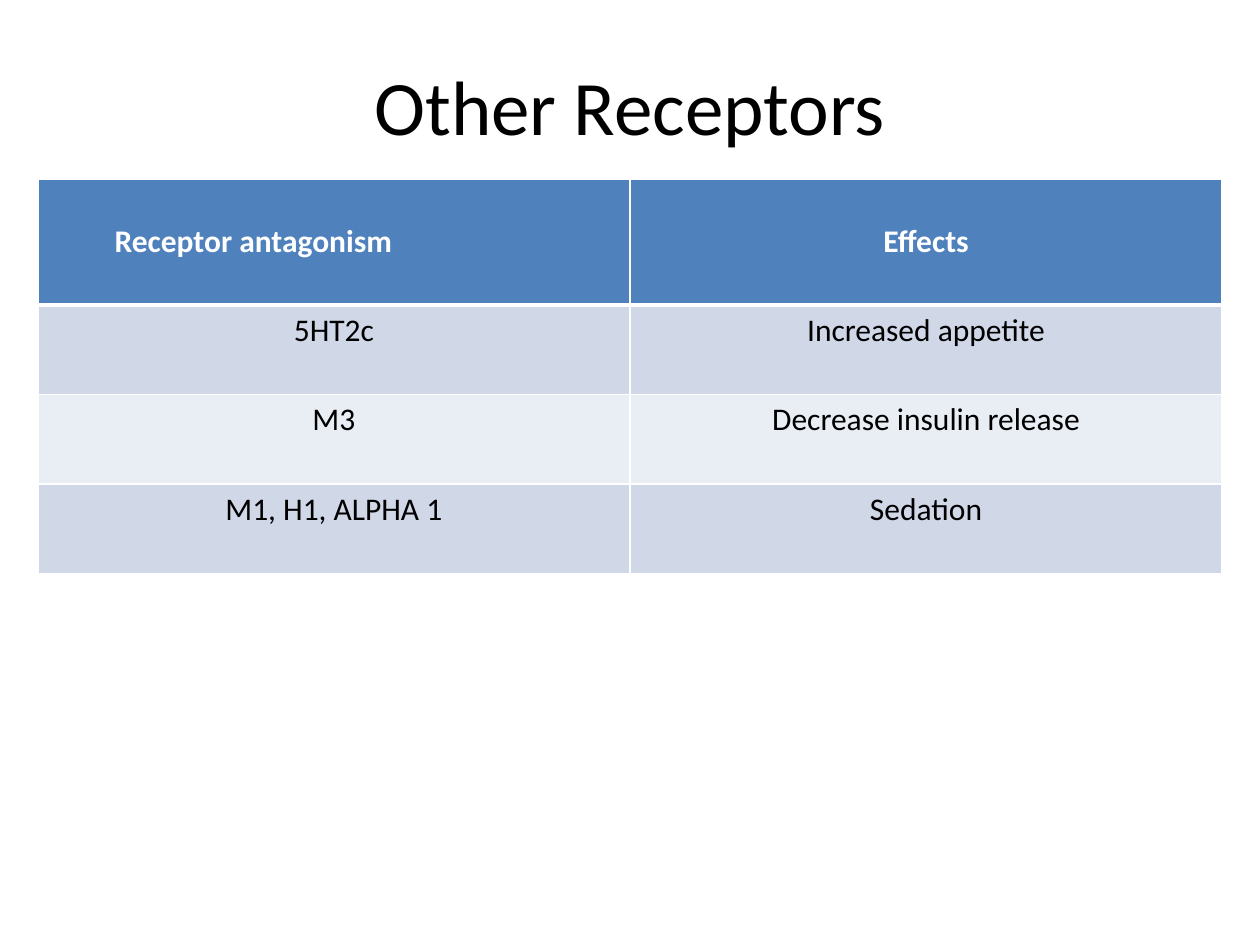
from pptx import Presentation
from pptx.dml.color import RGBColor
from pptx.enum.text import MSO_ANCHOR, PP_ALIGN
from pptx.oxml import parse_xml
from pptx.oxml.ns import nsdecls
from pptx.util import Inches, Pt

WHITE = RGBColor(0xFF, 0xFF, 0xFF)
BLACK = RGBColor(0x00, 0x00, 0x00)
HEADER_BLUE = RGBColor(0x4F, 0x81, 0xBD)
BAND_DARK = RGBColor(0xD0, 0xD8, 0xE8)
BAND_LIGHT = RGBColor(0xE9, 0xED, 0xF4)
FONT = "Calibri"
LEFT, WIDTH = 0.3, 9.4
HEADER_HEIGHT, ROW_HEIGHT = 1, 0.71
RECEPTOR_ROWS = [
    ("Receptor antagonism", "Effects"),
    ("5HT2c", "Increased appetite"),
    ("M3", "Decrease insulin release"),
    ("M1, H1, ALPHA 1", "Sedation"),
]


def set_text(frame, text, size, color, bold=False):
    frame.text = text
    paragraph = frame.paragraphs[0]
    paragraph.alignment = PP_ALIGN.CENTER
    for span in paragraph.runs:
        span.font.name = FONT
        span.font.size = Pt(size)
        span.font.bold = bold
        span.font.color.rgb = color


def set_borders(cell, top, bottom):
    properties = cell._tc.get_or_add_tcPr()
    for side, width in (("L", 1), ("R", 1), ("T", top), ("B", bottom)):
        properties.append(parse_xml(
            f'<a:ln{side} {nsdecls("a")} w="{Pt(width)}"><a:solidFill>'
            f'<a:srgbClr val="{WHITE}"/></a:solidFill></a:ln{side}>'))


def add_title(page, text):
    box = page.shapes.add_textbox(Inches(LEFT), Inches(0.25), Inches(WIDTH), Inches(1.17))
    frame = box.text_frame
    frame.word_wrap = True
    frame.vertical_anchor = MSO_ANCHOR.MIDDLE
    set_text(frame, text, 44, BLACK)


def add_receptor_table(page, rows):
    height = HEADER_HEIGHT + ROW_HEIGHT * (len(rows) - 1)
    table = page.shapes.add_table(
        len(rows), 2, Inches(LEFT), Inches(1.42), Inches(WIDTH), Inches(height)).table
    for row_index, texts in enumerate(rows):
        header = row_index == 0
        table.rows[row_index].height = Inches(HEADER_HEIGHT if header else ROW_HEIGHT)
        band = BAND_DARK if row_index % 2 else BAND_LIGHT
        for column_index, text in enumerate(texts):
            cell = table.cell(row_index, column_index)
            set_borders(cell, 3 if row_index == 1 else 1, 3 if header else 1)
            cell.fill.solid()
            cell.fill.fore_color.rgb = HEADER_BLUE if header else band
            cell.vertical_anchor = MSO_ANCHOR.MIDDLE if header else MSO_ANCHOR.TOP
            set_text(cell.text_frame, text, 18, WHITE if header else BLACK, header)
    first_header = table.cell(0, 0)
    first_header.margin_left = Inches(0.61)
    first_header.text_frame.paragraphs[0].alignment = PP_ALIGN.LEFT


def main():
    deck = Presentation()
    deck.slide_width, deck.slide_height = Inches(10), Inches(7.5)
    page = deck.slides.add_slide(deck.slide_layouts[6])
    add_title(page, "Other Receptors")
    add_receptor_table(page, RECEPTOR_ROWS)
    deck.save("out.pptx")


if __name__ == "__main__":
    main()
